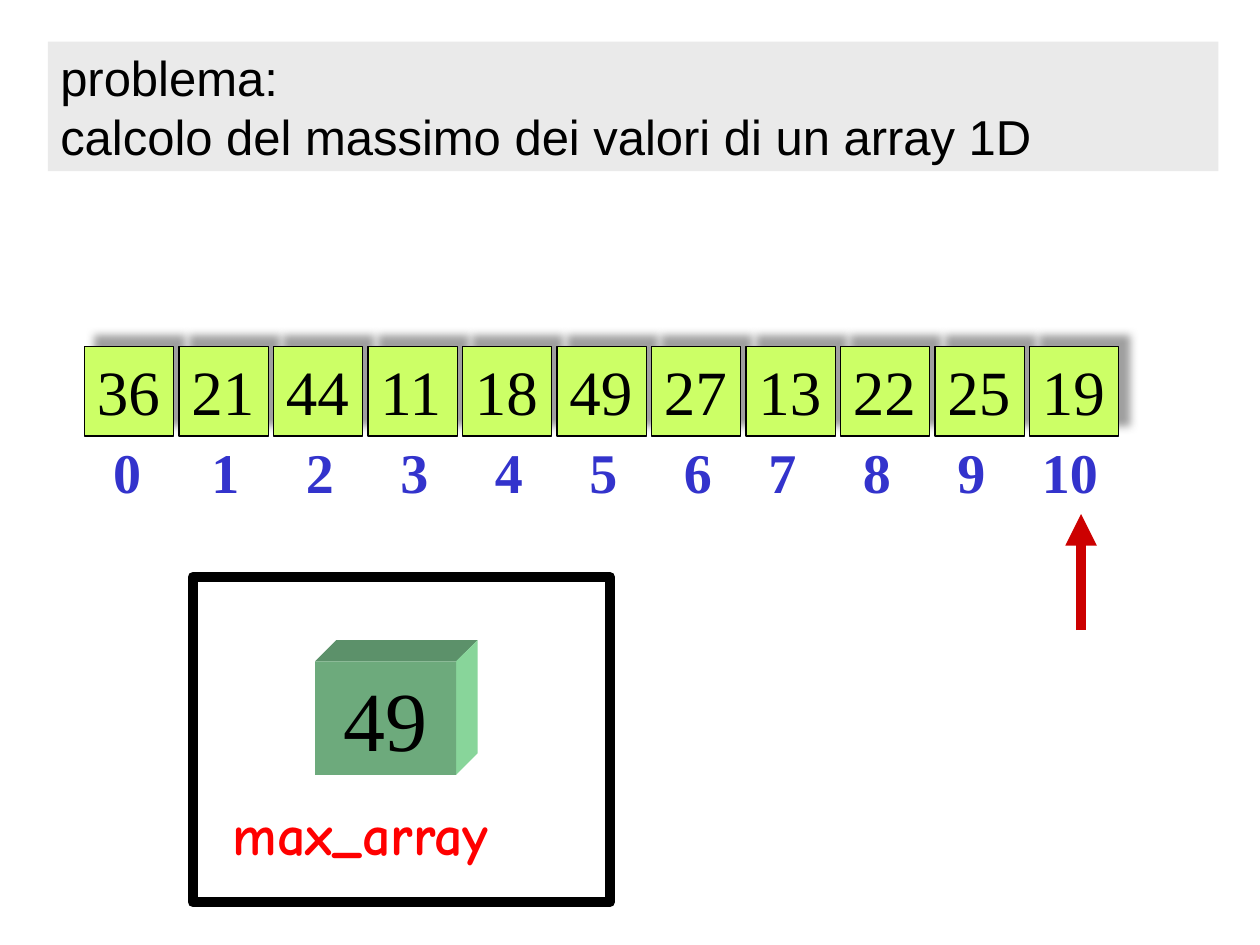
import pptx
import pptx.dml.color
import pptx.enum.shapes
import pptx.enum.text
import pptx.oxml
import pptx.oxml.ns
import pptx.util
from dataclasses import dataclass

Inches = pptx.util.Inches
Pt = pptx.util.Pt


@dataclass(frozen=True)
class Theme:
    black: str = "000000"
    title_fill: str = "EAEAEA"
    cell_fill: str = "CCFF66"
    shadow: str = "808080"
    index: str = "3333CC"
    arrow: str = "CC0000"
    name: str = "FF0000"
    cube_front: str = "6DAA7C"
    cube_top: str = "5C916A"
    cube_side: str = "88D59A"
    sans: str = "Arial"
    serif: str = "Times New Roman"
    hand: str = "Comic Neue"
    title_size: int = 28
    cell_size: int = 36
    index_size: int = 32
    max_size: int = 48
    thin: float = 0.75
    thick: float = 6


THEME = Theme()
VALUES = [36, 21, 44, 11, 18, 49, 27, 13, 22, 25, 19]
ROW_LEFT, ROW_TOP, CELL, PITCH = 0.67, 2.75, 0.71, 0.75


def rgb(color):
    return pptx.dml.color.RGBColor.from_string(color)


def paint(sp, fill=None, line=None, line_width=THEME.thin):
    sp.shadow.inherit = False
    if fill:
        sp.fill.solid()
        sp.fill.fore_color.rgb = rgb(fill)
    else:
        sp.fill.background()
    if line:
        sp.line.color.rgb = rgb(line)
        sp.line.width = Pt(line_width)
    else:
        sp.line.fill.background()


def write(sp, lines, font, size, color=THEME.black, bold=False, wrap=False,
          align=pptx.enum.text.PP_ALIGN.LEFT):
    tf = sp.text_frame
    tf.text = "\n".join(lines)
    tf.word_wrap = wrap
    tf.auto_size = pptx.enum.text.MSO_AUTO_SIZE.SHAPE_TO_FIT_TEXT
    tf.vertical_anchor = pptx.enum.text.MSO_ANCHOR.TOP
    for p in tf.paragraphs:
        p.alignment = align
        p.font.name = font
        p.font.size = Pt(size)
        p.font.bold = bold
        p.font.color.rgb = rgb(color)


def add_box(s, left, top, width, height, **style):
    sp = s.shapes.add_shape(pptx.enum.shapes.MSO_SHAPE.RECTANGLE,
                            Inches(left), Inches(top), Inches(width), Inches(height))
    paint(sp, **style)
    return sp


def add_label(s, left, top, width, height, text, font, size, color):
    sp = s.shapes.add_textbox(Inches(left), Inches(top), Inches(width), Inches(height))
    write(sp, [text], font, size, color, bold=True)


def add_face(s, points, fill):
    corners = [(Inches(x), Inches(y)) for x, y in points]
    builder = s.shapes.build_freeform(*corners[0])
    builder.add_line_segments(corners[1:])
    paint(builder.convert_to_shape(), fill)


def cast_shadow(sp):
    effects = sp._element.spPr.find(pptx.oxml.ns.qn("a:effectLst"))
    effects.append(pptx.oxml.parse_xml(
        f'<a:outerShdw {pptx.oxml.ns.nsdecls("a")} blurRad="{Pt(5)}" dist="{Pt(8.5)}" '
        f'dir="{315 * 60000}" algn="ctr" rotWithShape="0">'
        f'<a:srgbClr val="{THEME.shadow}"><a:alpha val="75000"/></a:srgbClr></a:outerShdw>'))


def add_cell(s, i, value):
    sp = add_box(s, ROW_LEFT + i * PITCH, ROW_TOP, CELL, CELL,
                 fill=THEME.cell_fill, line=THEME.black)
    cast_shadow(sp)
    write(sp, [str(value)], THEME.serif, THEME.cell_size)


def add_index(s, i):
    # Labels sit nearer the cell's left edge from 7 on; 10 needs a wider box
    offset = 0.13 if i == 0 else 0.16 if i < 7 else 0.08 if i < 10 else 0
    width = 0.42 if i < 10 else 0.65
    add_label(s, ROW_LEFT + i * PITCH + offset, 3.42, width, 0.63,
              str(i), THEME.serif, THEME.index_size, THEME.index)


def add_cube(s, left, top, width, height, depth, text):
    right, bottom = left + width, top + height
    add_face(s, [(left, top), (left + depth, top - depth),
                 (right + depth, top - depth), (right, top)], THEME.cube_top)
    add_face(s, [(right, top), (right + depth, top - depth),
                 (right + depth, bottom - depth), (right, bottom)], THEME.cube_side)
    sp = add_box(s, left, top, width, height, fill=THEME.cube_front)
    write(sp, [text], THEME.serif, THEME.max_size,
          align=pptx.enum.text.PP_ALIGN.CENTER)


def add_arrow(s, x1, y1, x2, y2):
    line = s.shapes.add_connector(pptx.enum.shapes.MSO_CONNECTOR.STRAIGHT,
                                  Inches(x1), Inches(y1), Inches(x2), Inches(y2))
    line.line.color.rgb = rgb(THEME.arrow)
    line.line.width = Pt(THEME.thick)
    ns = pptx.oxml.ns.nsdecls("a")
    line.line._get_or_add_ln().append(
        pptx.oxml.parse_xml(f'<a:tailEnd {ns} type="triangle"/>'))
    line._element.spPr.append(pptx.oxml.parse_xml(f"<a:effectLst {ns}/>"))


def main():
    prs = pptx.Presentation()
    prs.slide_width, prs.slide_height = Inches(10), Inches(7.5)
    s = prs.slides.add_slide(prs.slide_layouts[6])

    # Title band
    title = add_box(s, 0.38, 0.33, 9.29, 1.03, fill=THEME.title_fill)
    write(title, ["problema:", "calcolo del massimo dei valori di un array 1D"],
          THEME.sans, THEME.title_size, wrap=True)

    # Array cells with their indices
    for i, value in enumerate(VALUES):
        add_cell(s, i, value)
    for i in range(len(VALUES)):
        add_index(s, i)

    # Pointer to the current element
    add_arrow(s, 8.58, 5, 8.58, 4.08)

    # Framed variable holding the maximum
    add_cube(s, 2.5, 5.25, 1.12, 0.9, 0.17, str(max(VALUES)))
    add_label(s, 1.75, 6.3, 2.5, 0.63, "max_array",
              THEME.hand, THEME.index_size, THEME.name)
    add_box(s, 1.53, 4.58, 3.31, 2.58, line=THEME.black, line_width=THEME.thick)

    prs.save("out.pptx")


if __name__ == "__main__":
    main()
